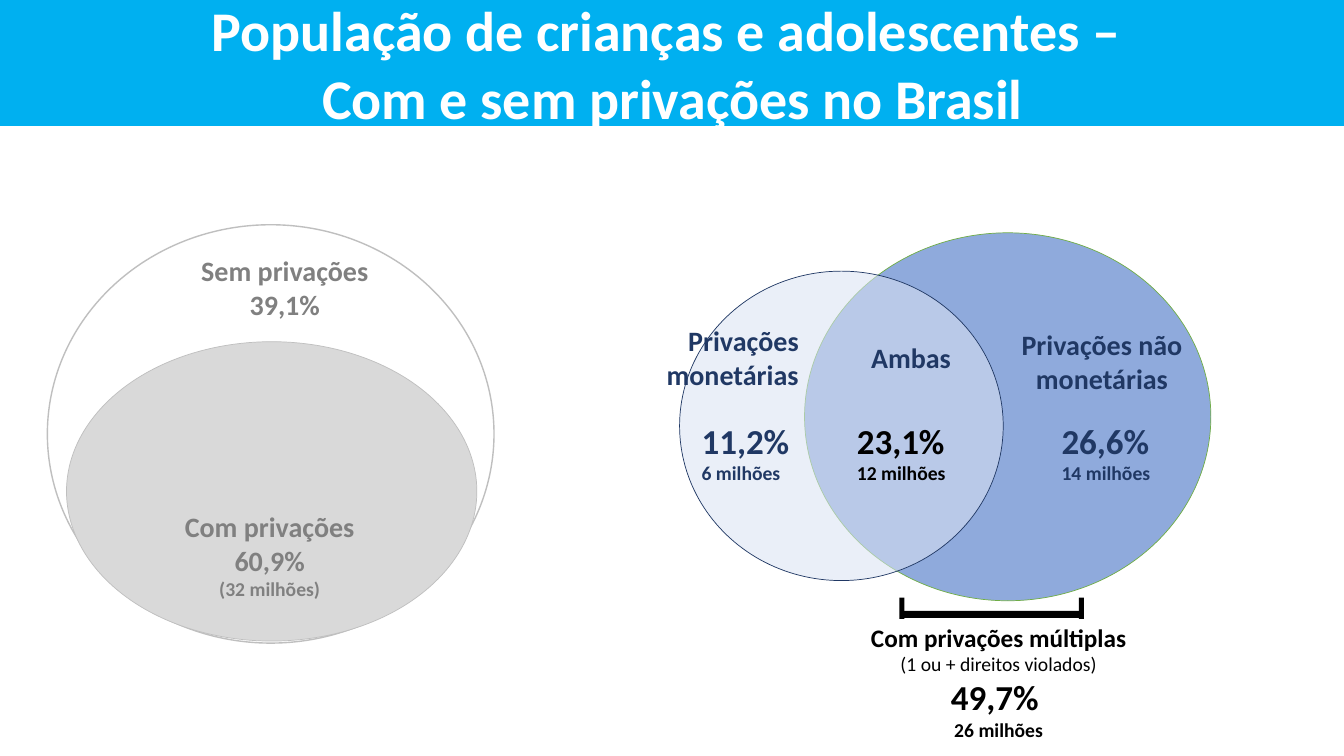
from lxml import etree
from pptx import Presentation
from pptx.dml.color import RGBColor
from pptx.enum.shapes import MSO_SHAPE as Shape
from pptx.enum.text import MSO_ANCHOR as Anchor, MSO_AUTO_SIZE as AutoSize, PP_ALIGN as Align
from pptx.oxml.ns import qn
from pptx.util import Inches, Pt

COLORS = {
    "banner": "00B0F0", "white": "FFFFFF", "black": "000000",
    "navy": "203864", "blue": "8FAADC", "pale_blue": "DAE3F3", "green": "70AD47",
    "gray_text": "808080", "gray_line": "BFBFBF", "gray_fill": "D9D9D9",
}


def rgb(name):
    return RGBColor.from_string(COLORS[name])


class SlideBuilder:
    font = "Calibri"

    def __init__(self, page):
        self.page = page

    def shape(self, kind, at, fill=None, line=None, width=0.5, opacity=None, shapes=None):
        shapes = self.page.shapes if shapes is None else shapes
        item = shapes.add_shape(kind, *map(Inches, at))
        item.shadow.inherit = False
        if fill:
            item.fill.solid()
            item.fill.fore_color.rgb = rgb(fill)
        else:
            item.fill.background()
        if opacity is not None:
            color = item.element.spPr.find(qn("a:solidFill"))[0]
            etree.SubElement(color, qn("a:alpha")).set("val", str(opacity * 1000))
        if line:
            item.line.color.rgb = rgb(line)
            item.line.width = Pt(width)
        else:
            item.line.fill.background()
        return item

    def ellipse(self, at, **style):
        return self.shape(Shape.OVAL, at, **style)

    def bracket(self, bars, color):
        group = self.page.shapes.add_group_shape()
        for at in bars:
            self.shape(Shape.RECTANGLE, at, fill=color, shapes=group.shapes)

    def set_lines(self, frame, lines, color, align):
        """Fill a frame with (text, size) or (text, size, bold) lines."""
        frame.text = "\n".join(line[0] for line in lines)
        for para, (_, size, *bold) in zip(frame.paragraphs, lines):
            para.alignment = align
            for span in para.runs:
                span.font.name = self.font
                span.font.size = Pt(size)
                span.font.bold = bold[0] if bold else True
                span.font.color.rgb = rgb(color)

    def label(self, at, lines, color="navy", align=Align.CENTER, wrap=True):
        box = self.page.shapes.add_textbox(*map(Inches, at))
        box.text_frame.word_wrap = wrap
        box.text_frame.auto_size = AutoSize.SHAPE_TO_FIT_TEXT
        self.set_lines(box.text_frame, lines, color, align)

    def banner(self, at, lines):
        bar = self.shape(Shape.RECTANGLE, at, fill="banner")
        bar.text_frame.word_wrap = True
        bar.text_frame.vertical_anchor = Anchor.MIDDLE
        self.set_lines(bar.text_frame, lines, "white", Align.CENTER)


def main():
    deck = Presentation()
    deck.slide_width, deck.slide_height = Inches(13.33), Inches(7.5)
    builder = SlideBuilder(deck.slides.add_slide(deck.slide_layouts[6]))

    # Whole population and the share with deprivations
    builder.ellipse((0.47, 2.23, 4.43, 4.15), line="gray_line", width=1)
    builder.ellipse((0.66, 3.39, 4.07, 2.97), fill="gray_fill", line="gray_line")

    # Overlap of monetary and non-monetary deprivations
    builder.ellipse((7.98, 2.31, 4.03, 3.65), fill="blue", line="green")
    builder.ellipse((6.74, 2.69, 3.21, 3.07), fill="pale_blue", line="navy", opacity=56)

    figures = [
        (6.86, 1.09, "11,2%", "6 milhões", "navy"),
        (8.4, 1.17, "23,1%", "12 milhões", "black"),
        (10.43, 1.22, "26,6%", "14 milhões", "navy"),
    ]
    for left, width, share, people, color in figures:
        builder.label((left, 4.11, width, 0.76), [(share, 25), (people, 14)],
                      color, Align.LEFT)

    builder.label((5.64, 3.16, 2.38, 0.77), [("Privações monetárias", 20)], align=Align.RIGHT)
    builder.label((7.15, 3.33, 2.38, 0.44), [("Ambas", 20)], align=Align.RIGHT)
    builder.label((9.6, 3.2, 2.66, 0.77), [("Privações não monetárias", 20)])

    builder.label((1.43, 2.47, 2.79, 0.77),
                  [("Sem privações", 20), ("39,1%", 20)], "gray_text")
    builder.label((1.28, 5.01, 2.79, 1.01),
                  [("Com privações", 20), ("60,9%", 20), ("(32 milhões)", 14)], "gray_text")

    builder.bracket([(8.93, 6.06, 1.81, 0.07), (8.92, 5.93, 0.05, 0.21),
                     (10.7, 5.93, 0.05, 0.21)], "black")
    builder.label((8.53, 6.12, 2.75, 1.3),
                  [("Com privações múltiplas", 18), ("(1 ou + direitos violados)", 14, False),
                   ("49,7% ", 25), ("26 milhões", 14)], "black", wrap=False)

    builder.banner((0, 0, 13.34, 1.25),
                   [("População de crianças e adolescentes – ", 40),
                    ("Com e sem privações no Brasil", 40)])
    deck.save("out.pptx")


if __name__ == "__main__":
    main()
